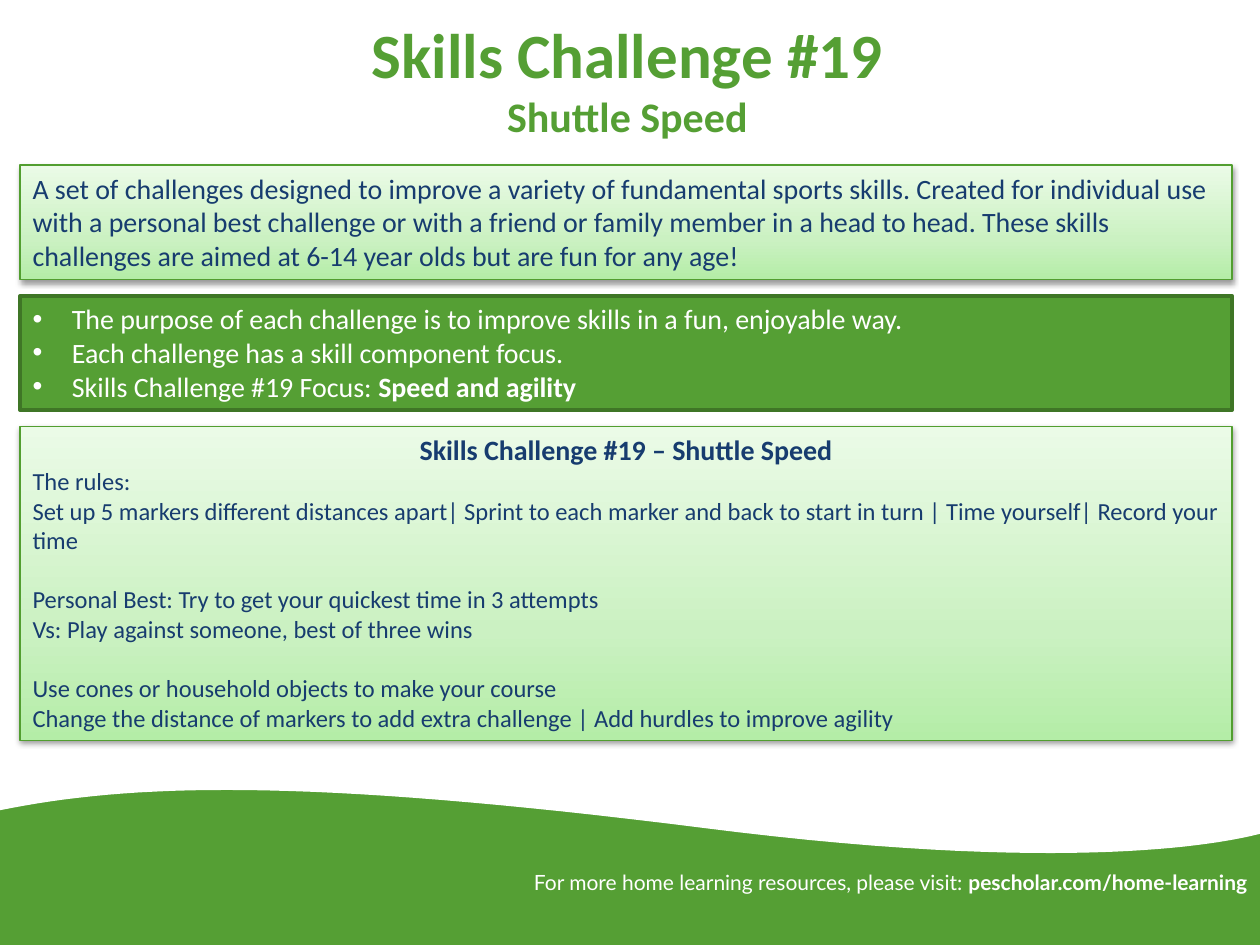
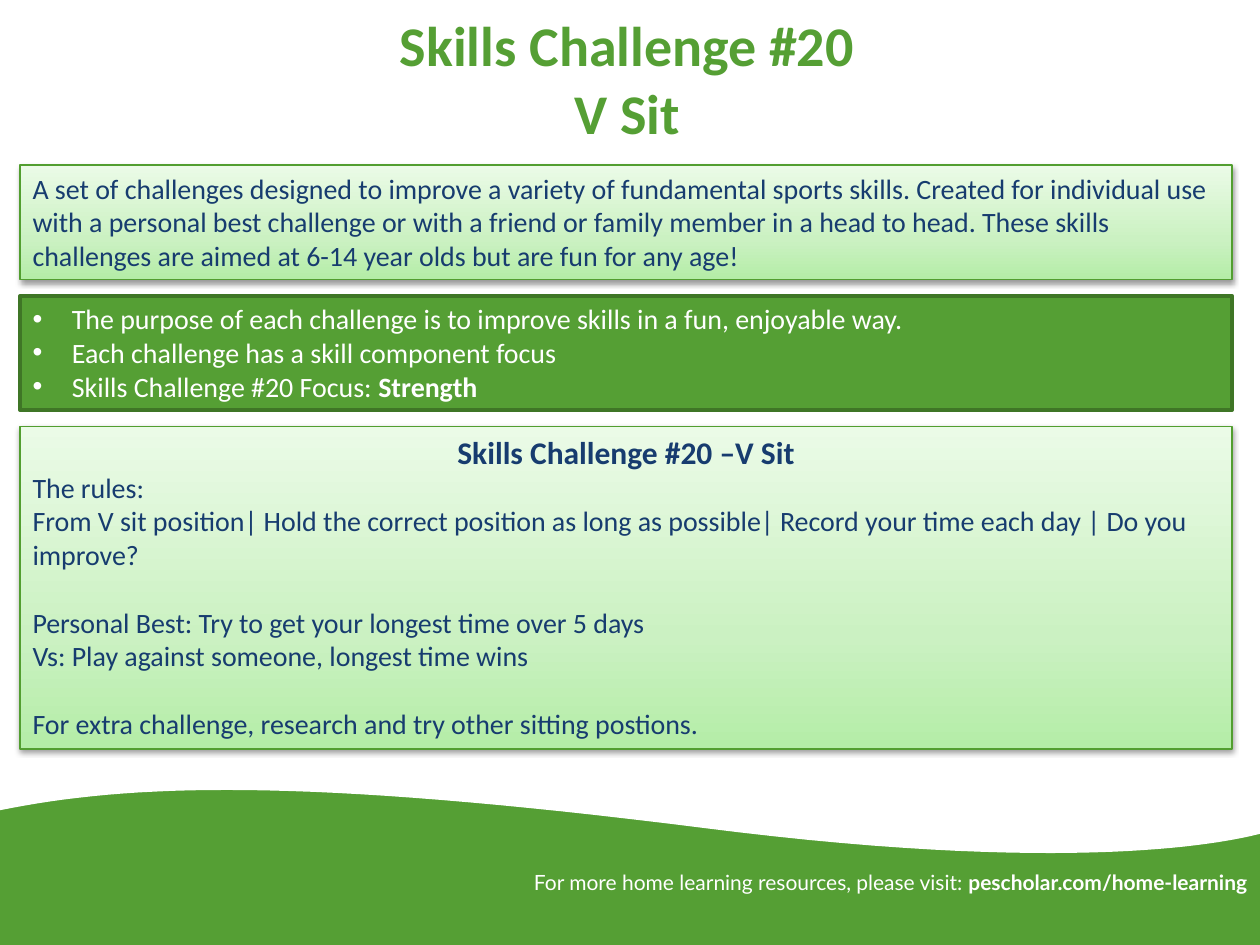
from pptx import Presentation
from pptx.dml.color import RGBColor
from pptx.enum.shapes import MSO_SHAPE
from pptx.enum.text import MSO_ANCHOR, PP_ALIGN
from pptx.oxml import parse_xml
from pptx.oxml.ns import nsdecls, qn
from pptx.util import Pt

GREEN = "559F34"
DARK_GREEN = "3F7626"
EDGE_GREEN = "529E30"
NAVY = "173C6F"
WHITE = "FFFFFF"
PALE_STOPS = [(0, "B4EDA7"), (35, "CBF1C2"), (100, "EBFBE7")]

PANEL_LEFT, PANEL_WIDTH = 11.5, 692.6
INTRO_TOP, FOCUS_TOP, RULES_TOP = 94.3, 169, 243.7
SHORT_PANEL_HEIGHT = 65.4
WAVE_CURVES = [
    [(0, 463), (74, 448), (171, 444), (401, 473)],
    [(401, 473), (631, 502.5), (713, 478), (722, 476)],
]
WAVE_STEPS = 32

INTRO = (
    "A set of challenges designed to improve a variety of fundamental sports skills. "
    "Created for individual use with a personal best challenge or with a friend or family "
    "member in a head to head. These skills challenges are aimed at 6-14 year olds but are "
    "fun for any age!"
)
PURPOSE = "The purpose of each challenge is to improve skills in a fun, enjoyable way."

CHALLENGES = [
    {
        "number": 19,
        "name": "Shuttle Speed",
        "title_sizes": (36, 24),
        "component": "Each challenge has a skill component focus.",
        "focus": "Speed and agility",
        "heading": "Skills Challenge #19 – Shuttle Speed",
        "heading_size": 16,
        "rules_size": 14,
        "rules_height": 179.3,
        "rule_groups": [
            [
                "The rules:",
                "Set up 5 markers different distances apart| Sprint to each marker and back "
                "to start in turn | Time yourself| Record your time",
            ],
            [
                "Personal Best: Try to get your quickest time in 3 attempts",
                "Vs: Play against someone, best of three wins",
            ],
            [
                "Use cones or household objects to make your course",
                "Change the distance of markers to add extra challenge | Add hurdles to "
                "improve agility",
            ],
        ],
    },
    {
        "number": 20,
        "name": "V Sit",
        "title_sizes": (32, 32),
        "component": "Each challenge has a skill component focus",
        "focus": "Strength",
        "heading": "Skills Challenge #20 –V Sit",
        "heading_size": 18,
        "rules_size": 16,
        "rules_height": 184.3,
        "rule_groups": [
            [
                "The rules:",
                "From V sit position| Hold the correct position as long as possible| Record "
                "your time each day | Do you improve?",
            ],
            [
                "Personal Best: Try to get your longest time over 5 days",
                "Vs: Play against someone, longest time wins",
            ],
            ["For extra challenge, research and try other sitting postions."],
        ],
    },
]


def paint(target, color):
    target.solid()
    target.fore_color.rgb = RGBColor.from_string(color)


def add_span(para, text, size=16, color=NAVY, bold=False, font="Calibri"):
    span = para.add_run()
    span.text = text
    span.font.name = font
    span.font.size = Pt(size)
    span.font.bold = bold
    paint(span.font.fill, color)


def next_para(frame, align=PP_ALIGN.LEFT, gap=0):
    first = frame.paragraphs[0]
    para = first if not first.runs else frame.add_paragraph()
    para.alignment = align
    para.space_before = Pt(gap)
    return para


def add_bullet(para):
    properties = para._p.get_or_add_pPr()
    properties.set("marL", str(Pt(22.5)))
    properties.set("indent", str(Pt(-22.5)))
    properties.append(parse_xml(f'<a:buFont {nsdecls("a")} typeface="Arial"/>'))
    properties.append(parse_xml(f'<a:buChar {nsdecls("a")} char="•"/>'))


def add_text_box(page, left, top, width, height, anchor=MSO_ANCHOR.TOP):
    box = page.shapes.add_textbox(Pt(left), Pt(top), Pt(width), Pt(height))
    box.text_frame.word_wrap = True
    box.text_frame.vertical_anchor = anchor
    return box.text_frame


def add_panel(page, top, height, edge, edge_width):
    panel = page.shapes.add_shape(
        MSO_SHAPE.RECTANGLE, Pt(PANEL_LEFT), Pt(top), Pt(PANEL_WIDTH), Pt(height)
    )
    panel.shadow.inherit = False
    paint(panel.line.fill, edge)
    panel.line.width = Pt(edge_width)
    panel.text_frame.word_wrap = True
    panel.text_frame.vertical_anchor = MSO_ANCHOR.TOP
    return panel


def add_pale_panel(page, top, height):
    panel = add_panel(page, top, height, EDGE_GREEN, 0.75)
    stops = "".join(
        f'<a:gs pos="{place * 1000}"><a:srgbClr val="{color}"/></a:gs>'
        for place, color in PALE_STOPS
    )
    properties = panel._element.spPr
    properties.find(qn("a:prstGeom")).addnext(parse_xml(
        f'<a:gradFill {nsdecls("a")} rotWithShape="1"><a:gsLst>{stops}</a:gsLst>'
        '<a:lin ang="16200000" scaled="0"/></a:gradFill>'
    ))
    properties.find(qn("a:effectLst")).append(parse_xml(
        f'<a:outerShdw {nsdecls("a")} blurRad="{Pt(3.1)}" dist="{Pt(1.6)}" '
        'dir="5400000" rotWithShape="0"><a:srgbClr val="000000">'
        '<a:alpha val="38000"/></a:srgbClr></a:outerShdw>'
    ))
    return panel.text_frame


def curve_point(curve, t):
    weights = ((1 - t) ** 3, 3 * t * (1 - t) ** 2, 3 * t ** 2 * (1 - t), t ** 3)
    return tuple(
        Pt(sum(weight * point[axis] for weight, point in zip(weights, curve)))
        for axis in (0, 1)
    )


def add_wave_footer(page):
    band = page.shapes.add_shape(MSO_SHAPE.RECTANGLE, 0, Pt(447), Pt(720), Pt(93))
    edge = [
        curve_point(curve, step / WAVE_STEPS)
        for curve in WAVE_CURVES
        for step in range(WAVE_STEPS + 1)
    ]
    builder = page.shapes.build_freeform(0, Pt(430.5), scale=1.0)
    builder.add_line_segments(edge + [(Pt(722), Pt(430.5))], close=True)
    wave = builder.convert_to_shape()
    for shape, color in ((band, GREEN), (wave, WHITE)):
        shape.shadow.inherit = False
        paint(shape.fill, color)
        shape.line.fill.background()


def add_footer_text(page):
    frame = add_text_box(page, 244, 493.2, 476, 21.8)
    para = next_para(frame, PP_ALIGN.RIGHT)
    style = {"size": 12, "color": WHITE, "font": "Lato"}
    add_span(para, "For more home learning resources, please visit: ", **style)
    add_span(para, "pescholar.com/home-learning", bold=True, **style)


def add_title(page, lines, sizes):
    frame = add_text_box(page, 34.5, -0.4, 648, 90, MSO_ANCHOR.MIDDLE)
    para = next_para(frame, PP_ALIGN.CENTER)
    for line, size in zip(lines, sizes):
        if para.runs:
            para.add_line_break()
        add_span(para, line, size=size, color=GREEN, bold=True)


def add_intro(page):
    frame = add_pale_panel(page, INTRO_TOP, SHORT_PANEL_HEIGHT)
    add_span(next_para(frame), INTRO)


def add_focus(page, challenge):
    panel = add_panel(page, FOCUS_TOP, SHORT_PANEL_HEIGHT, DARK_GREEN, 2)
    paint(panel.fill, GREEN)
    label = f"Skills Challenge #{challenge['number']} Focus: "
    for text in (PURPOSE, challenge["component"], label):
        para = next_para(panel.text_frame)
        add_bullet(para)
        add_span(para, text, color=WHITE)
    add_span(para, challenge["focus"], color=WHITE, bold=True)


def add_rules(page, challenge):
    frame = add_pale_panel(page, RULES_TOP, challenge["rules_height"])
    heading = next_para(frame, PP_ALIGN.CENTER)
    add_span(heading, challenge["heading"], size=challenge["heading_size"], bold=True)
    size = challenge["rules_size"]
    for group_index, group in enumerate(challenge["rule_groups"]):
        for line_index, line in enumerate(group):
            starts_group = group_index > 0 and line_index == 0
            para = next_para(frame, gap=round(size * 1.22, 1) if starts_group else 0)
            add_span(para, line, size=size)


def main():
    deck = Presentation()
    deck.slide_width, deck.slide_height = Pt(720), Pt(540)
    for challenge in CHALLENGES:
        page = deck.slides.add_slide(deck.slide_layouts[6])
        add_wave_footer(page)
        title = (f"Skills Challenge #{challenge['number']}", challenge["name"])
        add_title(page, title, challenge["title_sizes"])
        add_intro(page)
        add_focus(page, challenge)
        add_rules(page, challenge)
        add_footer_text(page)
    deck.save("out.pptx")


if __name__ == "__main__":
    main()
